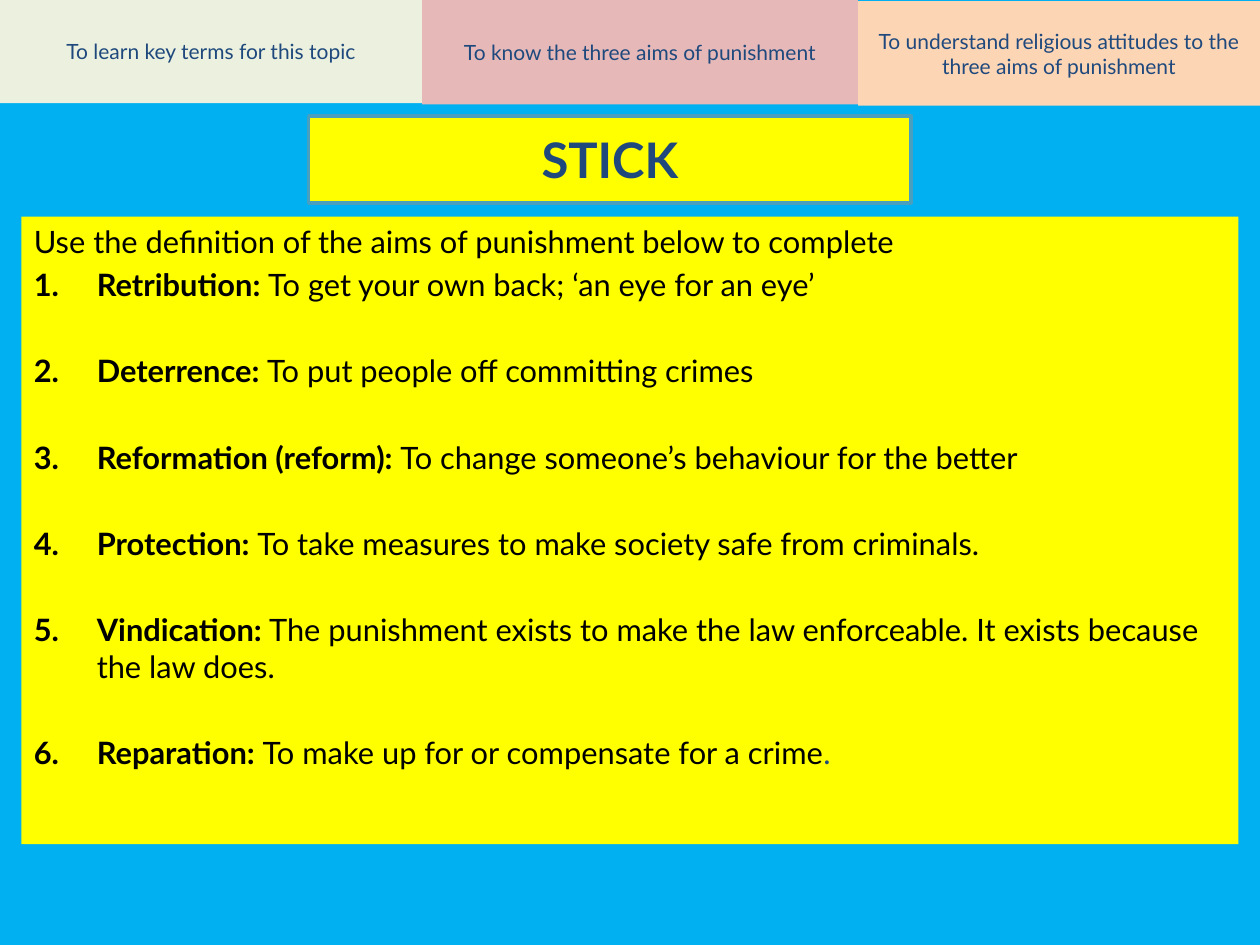
import pptx
import pptx.util
import pptx.dml.color
import pptx.enum.shapes
import pptx.enum.text
import pptx.oxml.ns
import lxml.etree

WIDTH, HEIGHT = 10, 7.5
FONT = "Lato"
SKY, YELLOW, NAVY, BLACK, BORDER = "00B0F0", "FFFF00", "1F497D", "000000", "4A9FBF"

TITLE = "STICK"
INTRO = "Use the definition of the aims of punishment below to complete"
OBJECTIVES = [
    ("To learn key terms for this topic", "EBF1DE", 3.35),
    ("To know the three aims of punishment", "E6B9B8", 3.46),
    ("To understand religious attitudes to the three aims of punishment", "FCD5B5", 3.19),
]
AIMS = [
    ("Retribution: ", "To get your own back; ‘an eye for an eye’", ""),
    ("Deterrence: ", "To put people off committing crimes", ""),
    ("Reformation (reform): ", "To change someone’s behaviour for the better", ""),
    ("Protection: ", "To take measures to make society safe from criminals.", ""),
    ("Vindication:", " The punishment exists to make the law enforceable. It exists because the law does.", ""),
    ("Reparation: ", "To make up for or compensate for a crime", "."),
]
BODY_SIZE = 17.6
SMALL_GAP = 0.2 * BODY_SIZE
ITEM_GAP = 28.1
STRIP_HEIGHT = 0.83
STRIP_STEP = 0.01


def color(value):
    return pptx.dml.color.RGBColor.from_string(value)


def place(shape, left, top, width, height):
    shape.left, shape.top, shape.width, shape.height = map(
        pptx.util.Inches, (left, top, width, height))


def fill(target, value):
    target.fill.solid()
    target.fill.fore_color.rgb = color(value)


def add_span(para, text, size, value, bold=False):
    span = para.add_run()
    span.text = text
    span.font.name = FONT
    span.font.size = pptx.util.Pt(size)
    span.font.bold = bold
    span.font.color.rgb = color(value)


def center(shape, text, size, bold=False):
    frame = shape.text_frame
    frame.word_wrap = True
    frame.auto_size = pptx.enum.text.MSO_AUTO_SIZE.NONE
    frame.vertical_anchor = pptx.enum.text.MSO_ANCHOR.MIDDLE
    para = frame.paragraphs[0]
    para.alignment = pptx.enum.text.PP_ALIGN.CENTER
    add_span(para, text, size, NAVY, bold)


def number(para):
    properties = para._p.get_or_add_pPr()
    indent = pptx.util.Inches(0.5)
    properties.set("marL", str(indent))
    properties.set("indent", str(-indent))
    bullet = lxml.etree.SubElement(properties, pptx.oxml.ns.qn("a:buAutoNum"))
    bullet.set("type", "arabicPeriod")


def add_title(page):
    title = page.shapes.title
    place(title, 2.45, 0.92, 4.78, 0.69)
    fill(title, YELLOW)
    title.line.color.rgb = color(BORDER)
    title.line.width = pptx.util.Pt(2)
    center(title, TITLE, 28, True)


def add_aims(page):
    margin = 0.17
    box = page.shapes.add_textbox(0, 0, 0, 0)
    place(box, margin, 1.72, WIDTH - 2 * margin, 4.98)
    fill(box, YELLOW)
    frame = box.text_frame
    frame.word_wrap = True
    add_span(frame.paragraphs[0], INTRO, BODY_SIZE, BLACK)
    for index, (term, meaning, stop) in enumerate(AIMS):
        para = frame.add_paragraph()
        number(para)
        para.space_before = pptx.util.Pt(ITEM_GAP if index else SMALL_GAP)
        add_span(para, term, BODY_SIZE, BLACK, True)
        add_span(para, meaning, BODY_SIZE, BLACK)
        if stop:
            add_span(para, stop, BODY_SIZE, NAVY)


def add_objectives(page):
    left = 0
    for index, (text, shade, width) in enumerate(OBJECTIVES):
        strip = page.shapes.add_shape(pptx.enum.shapes.MSO_SHAPE.RECTANGLE, 0, 0, 0, 0)
        place(strip, left, (index - 1) * STRIP_STEP, width, STRIP_HEIGHT)
        strip.shadow.inherit = False
        fill(strip, shade)
        strip.line.fill.background()
        center(strip, text, 12)
        left += width


def main():
    deck = pptx.Presentation()
    deck.slide_width = pptx.util.Inches(WIDTH)
    deck.slide_height = pptx.util.Inches(HEIGHT)
    page = deck.slides.add_slide(deck.slide_layouts.get_by_name("Title Only"))
    fill(page.background, SKY)
    add_title(page)
    add_aims(page)
    add_objectives(page)
    deck.save("out.pptx")


if __name__ == "__main__":
    main()
